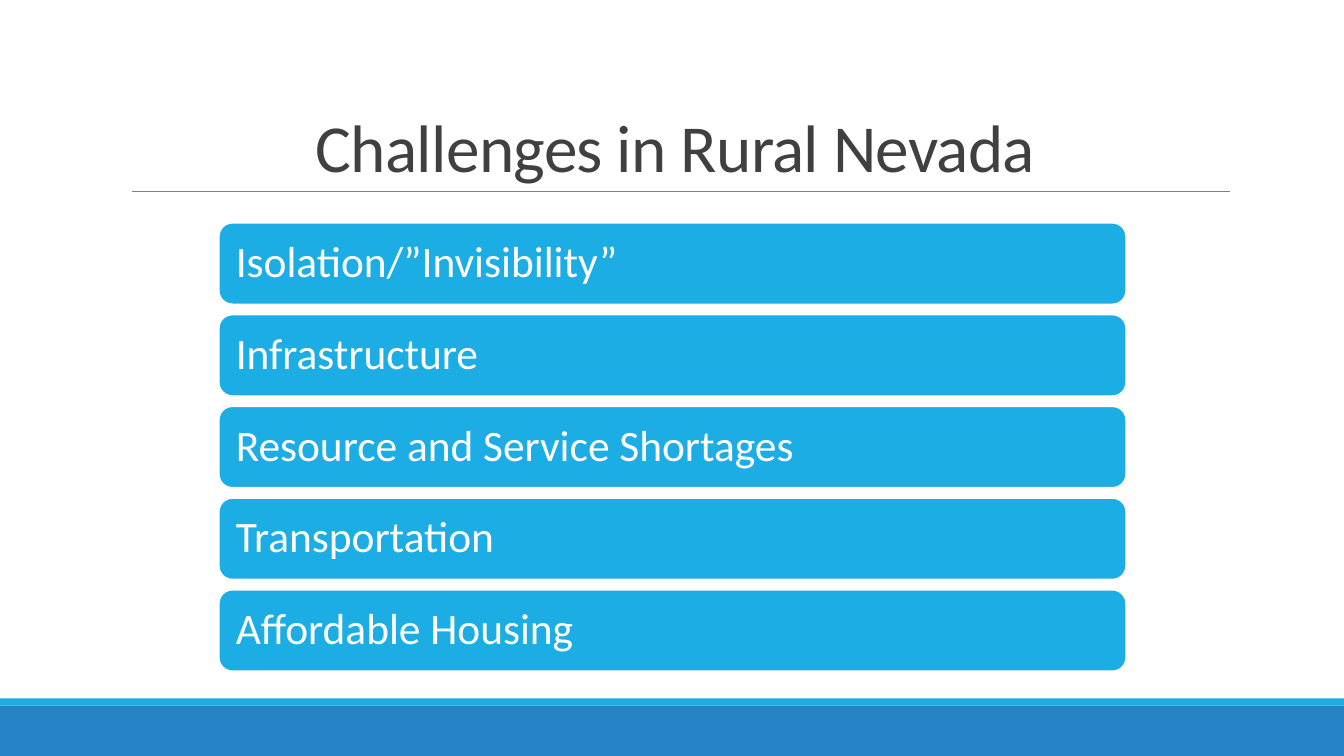
from pptx import Presentation
from pptx.dml.color import RGBColor
from pptx.enum.shapes import MSO_CONNECTOR, MSO_SHAPE
from pptx.enum.text import MSO_ANCHOR, PP_ALIGN
from pptx.oxml.ns import qn
from pptx.util import Inches, Pt
from lxml import etree

CHALLENGES = [
    "Isolation/”Invisibility”",
    "Infrastructure",
    "Resource and Service Shortages",
    "Transportation",
    "Affordable Housing",
]


def color(hex_code):
    return RGBColor.from_string(hex_code)


class SlideBuilder:
    FONT = "Calibri"
    BLUE = "2683C6"
    CYAN = "1CADE4"
    WHITE = "FFFFFF"
    DARK = "404040"
    GRAY = "808080"

    def __init__(self, slide):
        self.slide = slide

    def block(self, preset, left, top, width, height, fill):
        """Add a filled preset shape without outline or shadow."""
        block = self.slide.shapes.add_shape(
            preset, Inches(left), Inches(top), Inches(width), Inches(height))
        block.shadow.inherit = False
        block.fill.solid()
        block.fill.fore_color.rgb = color(fill)
        block.line.fill.background()
        return block

    def set_text(self, frame, text, size, text_color, align, spacing):
        """Fill a text frame with one styled paragraph."""
        frame.word_wrap = True
        paragraph = frame.paragraphs[0]
        paragraph.text = text
        paragraph.alignment = align
        paragraph.line_spacing = spacing
        paragraph.font.name = self.FONT
        paragraph.font.size = Pt(size)
        paragraph.font.color.rgb = color(text_color)
        return paragraph

    def title(self, text, left, top, width, height):
        heading = self.slide.shapes.add_textbox(
            Inches(left), Inches(top), Inches(width), Inches(height))
        frame = heading.text_frame
        frame.vertical_anchor = MSO_ANCHOR.BOTTOM
        paragraph = self.set_text(
            frame, text, 48, self.DARK, PP_ALIGN.CENTER, 0.85)
        # Letter spacing in hundredths of a point
        paragraph.runs[0].font._element.set("spc", "-50")

    def rule(self, left, right, top):
        """Add a thin horizontal line."""
        rule = self.slide.shapes.add_connector(
            MSO_CONNECTOR.STRAIGHT,
            Inches(left), Inches(top), Inches(right), Inches(top))
        rule.line.color.rgb = color(self.GRAY)
        rule.line.width = Pt(0.5)
        etree.SubElement(rule._element.spPr, qn("a:effectLst"))

    def bar(self, text, left, top, width, height):
        """Add a rounded bar with left-aligned text."""
        bar = self.block(MSO_SHAPE.ROUNDED_RECTANGLE,
                         left, top, width, height, self.CYAN)
        bar.line.color.rgb = color(self.WHITE)
        bar.line.width = Pt(1.25)
        frame = bar.text_frame
        frame.margin_left = frame.margin_right = Inches(0.13)
        frame.margin_top = frame.margin_bottom = Inches(0.13)
        frame.vertical_anchor = MSO_ANCHOR.MIDDLE
        self.set_text(frame, text, 31, self.WHITE, PP_ALIGN.LEFT, 0.9)


def main():
    deck = Presentation()
    deck.slide_width = Inches(13.33)
    deck.slide_height = Inches(7.5)
    builder = SlideBuilder(deck.slides.add_slide(deck.slide_layouts[6]))

    builder.block(MSO_SHAPE.RECTANGLE, 0, 7, 13.33, 0.5, builder.BLUE)
    builder.block(MSO_SHAPE.RECTANGLE, 0, 6.93, 13.33, 0.07, builder.CYAN)
    builder.rule(1.31, 12.2, 1.9)
    builder.title("Challenges in Rural Nevada", 1.2, 0.31, 11, 1.59)

    first_top, pitch = 2.21, 0.91
    for row, challenge in enumerate(CHALLENGES):
        builder.bar(challenge, 2.17, first_top + row * pitch, 9, 0.81)

    deck.save("out.pptx")


if __name__ == "__main__":
    main()
